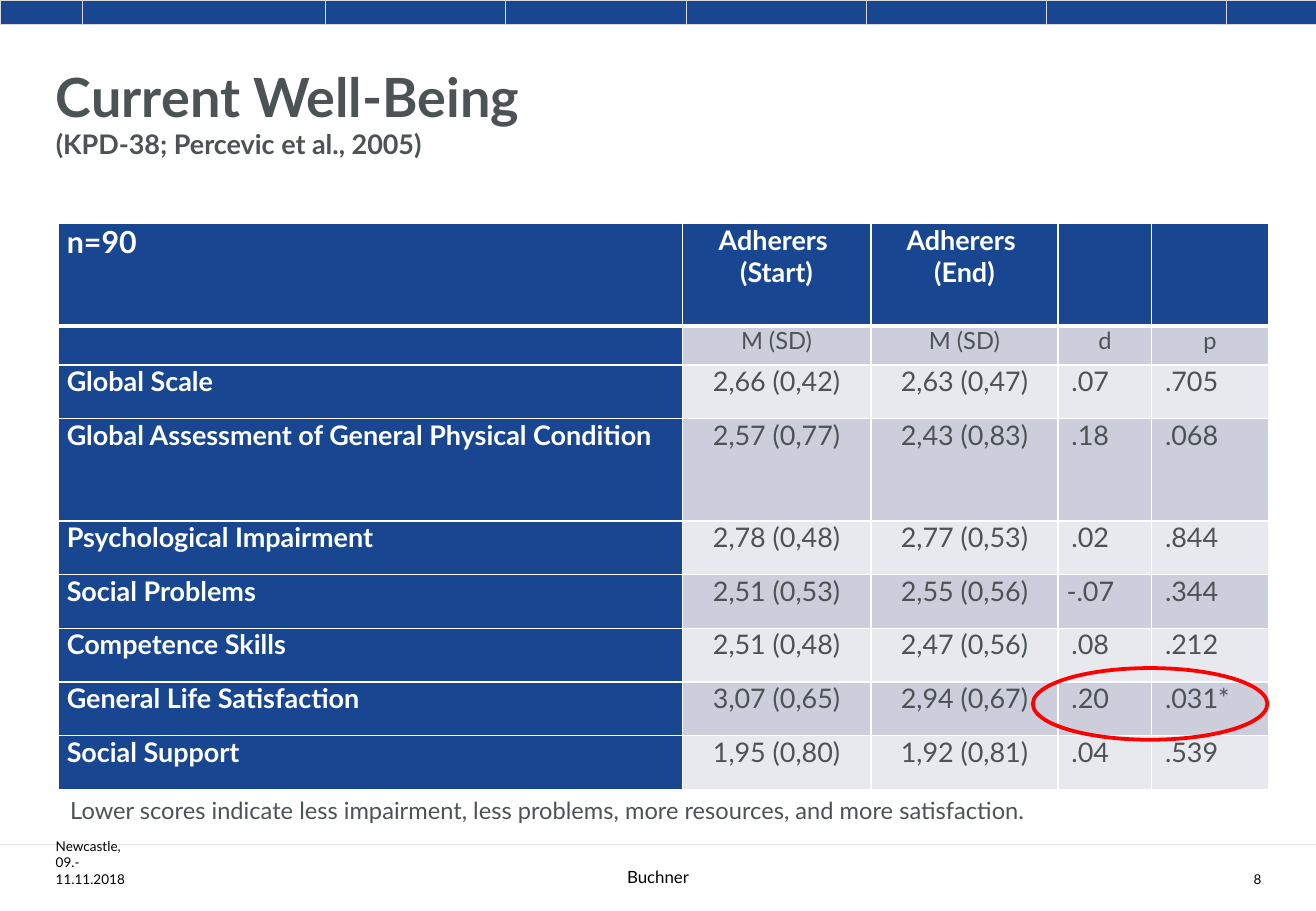
from pptx import Presentation, util as u
from pptx.dml.color import RGBColor
from pptx.enum import shapes, text
from pptx.oxml import parse_xml
from pptx.oxml.ns import nsdecls
from pptx.oxml.xmlchemy import OxmlElement

TITLE = "Current Well-Being\n(KPD-38; Percevic et al., 2005)"
HEAD = ["n=90", "Adherers \n(Start)", "Adherers \n(End)", "", ""]
UNITS = ["", "M (SD)", "M (SD)", "d", "p"]
SCALES = [
    ("Global Scale", "2,66 (0,42)", "2,63 (0,47)", ".07", ".705"),
    ("Global Assessment of General Physical Condition",
     "2,57 (0,77)", "2,43 (0,83)", ".18", ".068"),
    ("Psychological Impairment", "2,78 (0,48)", "2,77 (0,53)", ".02", ".844"),
    ("Social Problems", "2,51 (0,53)", "2,55 (0,56)", "-.07", ".344"),
    ("Competence Skills", "2,51 (0,48)", "2,47 (0,56)", ".08", ".212"),
    ("General Life Satisfaction", "3,07 (0,65)", "2,94 (0,67)", ".20", ".031*"),
    ("Social Support", "1,95 (0,80)", "1,92 (0,81)", ".04", ".539"),
]
NOTE = ("Lower scores indicate less impairment, less problems, "
        "more resources, and more satisfaction.")
FOOT = ["Newcastle, 09.-11.11.2018", "Buchner", "8"]

THEME = {
    "font": "Lato", "blue": "184690", "ink": "4C5355", "white": "FFFFFF",
    "black": "000000", "red": "FF0000", "rule": "E3E4E5", "edge": "D9D9D9",
    "bands": ["E8E9EE", "CCCFDB"],
    "title": 32, "lead": 18, "body": 16, "small": 14, "foot": 10, "tiny": 8,
}
WIDE, HIGH = 10.83, 7.5
LEFT, TOP, SPAN, TALL = 0.48, 1.84, 9.96, 4.66
COLS = [5.13, 1.55, 1.54, 0.77, 0.96]
ROWS = [0.84, 0.32, 0.44, 0.84] + [0.44] * 5
BASE = 6.95
ALIGN = text.PP_ALIGN


def rgb(name):
    return RGBColor.from_string(THEME.get(name, name))


def write(frame, words, sizes, ink, bold=False, align=ALIGN.LEFT):
    """Fill a frame, one paragraph a line, with one size for each line."""
    frame.text = words
    for para, size in zip(frame.paragraphs, sizes):
        para.alignment = align
        for run in para.runs:
            form = {"name": THEME["font"], "size": u.Pt(THEME[size]), "bold": bold}
            for key, value in form.items():
                setattr(run.font, key, value)
            run.font.color.rgb = rgb(ink)


def label(slide, box, words, size, ink, align=ALIGN.LEFT, anchor=text.MSO_ANCHOR.TOP):
    frame = slide.shapes.add_textbox(*map(u.Inches, box)).text_frame
    frame.word_wrap, frame.vertical_anchor = True, anchor
    write(frame, words, [size], ink, align=align)


def outline(shape, ink, width):
    shape.line.color.rgb, shape.line.width = rgb(ink), u.Pt(width)


def plate(slide, kind, box, fill, ink, width):
    shape = slide.shapes.add_shape(kind, *map(u.Inches, box))
    shape.shadow.inherit = False
    if fill:
        shape.fill.solid()
        shape.fill.fore_color.rgb = rgb(fill)
    else:
        shape.fill.background()
    outline(shape, ink, width)


def border(cell, widths):
    """Add white left, right, top and bottom cell borders, in points."""
    props = cell._tc.get_or_add_tcPr()
    for side, width in zip("LRTB", widths):
        props.append(parse_xml(
            f'<a:ln{side} {nsdecls("a")} w="{u.Pt(width)}"><a:solidFill>'
            f'<a:srgbClr val="{THEME["white"]}"/></a:solidFill></a:ln{side}>'))


def banner(slide):
    shape = slide.shapes.add_connector(
        shapes.MSO_CONNECTOR.STRAIGHT, 0, u.Inches(BASE), u.Inches(WIDE), u.Inches(BASE))
    outline(shape, "rule", 0.5)
    shape._element.spPr.append(OxmlElement("a:effectLst"))
    step = (9.35 - 0.45) / 6
    tiles = [(0.45 + step * i, 2.23) for i in reversed(range(7))] + [(0, 0.68)]
    for left, width in tiles:
        box = (left, 0, min(width, WIDE - left), 0.2)
        plate(slide, shapes.MSO_SHAPE.RECTANGLE, box, "blue", "edge", 0.5)


def heading(slide):
    title = slide.shapes.title
    for key, value in zip(("left", "top", "width", "height"), (0.36, 0.42, 7.5, 0.95)):
        setattr(title, key, u.Inches(value))
    frame = title.text_frame
    frame.vertical_anchor = text.MSO_ANCHOR.BOTTOM
    frame.auto_size = text.MSO_AUTO_SIZE.NONE
    write(frame, TITLE, ["title", "body"], "ink", True)


def scores(slide):
    data = [HEAD, UNITS, *SCALES]
    box = map(u.Inches, (LEFT, TOP, SPAN, TALL))
    table = slide.shapes.add_table(len(ROWS), len(COLS), *box).table
    table.first_row = table.horz_banding = False
    for col, share in zip(table.columns, COLS):
        col.width = u.Inches(SPAN * share / sum(COLS))
    for row, share in zip(table.rows, ROWS):
        row.height = u.Inches(TALL * share / sum(ROWS))
    for r, line in enumerate(data):
        for c, words in enumerate(line):
            cell = table.cell(r, c)
            dark = r == 0 or c == 0
            border(cell, (1, 1, 3 if r == 1 else 1, 3 if r == 0 else 1))
            cell.fill.solid()
            cell.fill.fore_color.rgb = rgb("blue" if dark else THEME["bands"][r % 2])
            inset = 0.11 if r > 1 and c > 2 and words[0] != "-" else 0.07
            for side, gap in (("left", inset), ("right", 0.07), ("top", 0), ("bottom", 0)):
                setattr(cell, f"margin_{side}", u.Inches(gap))
            size = "lead" if r == c == 0 else "small" if r == 1 else "body"
            mid = c in (1, 2) or r == 1
            write(cell.text_frame, words, [size] * 2, "white" if dark else "ink",
                  dark, ALIGN.CENTER if mid else ALIGN.LEFT)


def footer(slide):
    label(slide, (LEFT, TOP + TALL, SPAN, 0.34), NOTE, "small", "ink")
    spots = [(0.36, 0.89, "tiny", ALIGN.LEFT), (1.94, 6.95, "foot", ALIGN.CENTER),
             (9.59, 0.89, "tiny", ALIGN.RIGHT)]
    for words, (left, width, size, align) in zip(FOOT, spots):
        label(slide, (left, BASE, width, 0.4), words, size, "black", align,
              text.MSO_ANCHOR.BOTTOM)


def main():
    deck = Presentation()
    deck.slide_width, deck.slide_height = u.Inches(WIDE), u.Inches(HIGH)
    slide = deck.slides.add_slide(deck.slide_layouts[5])
    banner(slide)
    heading(slide)
    scores(slide)
    plate(slide, shapes.MSO_SHAPE.OVAL, (8.5, 5.5, 1.93, 0.59), None, "red", 2.25)
    footer(slide)
    deck.save("out.pptx")


if __name__ == "__main__":
    main()
